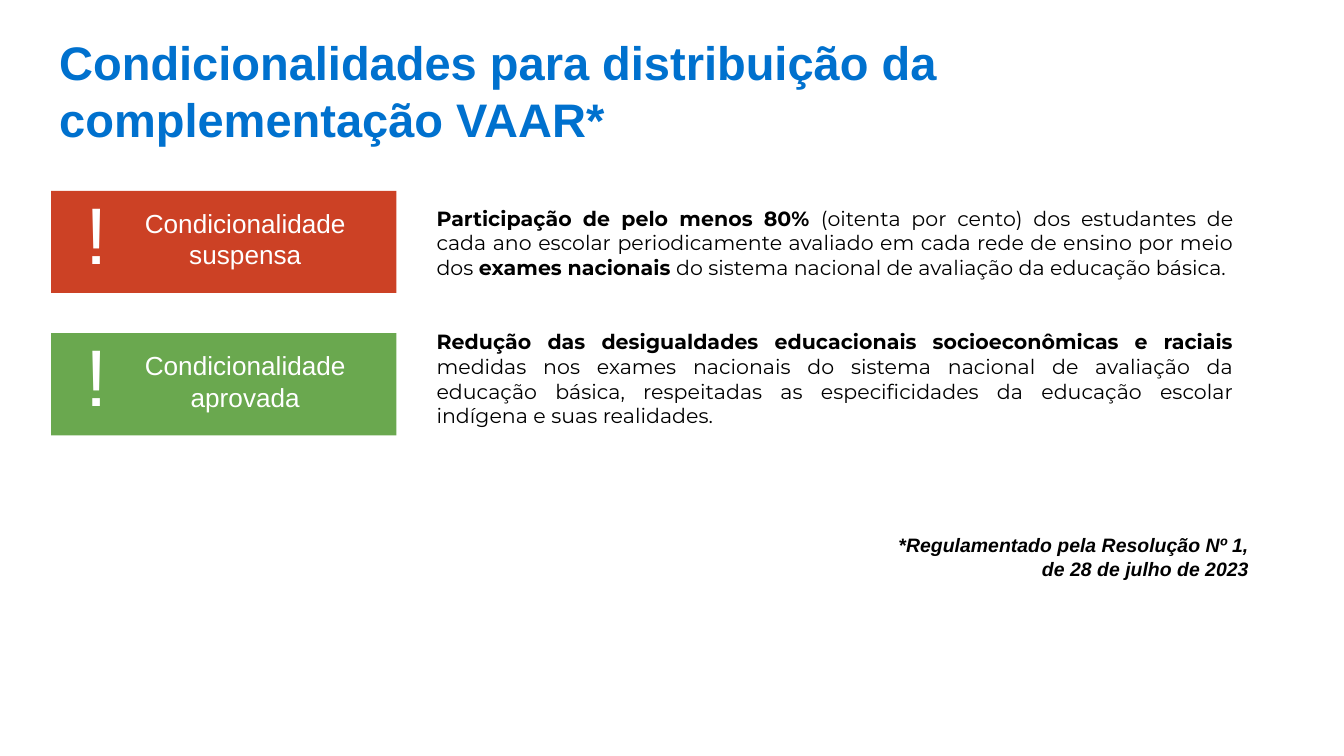
from pptx import Presentation
from pptx.dml.color import RGBColor
from pptx.enum.shapes import MSO_SHAPE
from pptx.enum.text import MSO_ANCHOR, PP_ALIGN
from pptx.util import Inches, Pt

RECT = MSO_SHAPE.RECTANGLE
TOP, MIDDLE = MSO_ANCHOR.TOP, MSO_ANCHOR.MIDDLE
LEFT, CENTER, RIGHT, JUSTIFY = (
    PP_ALIGN.LEFT, PP_ALIGN.CENTER, PP_ALIGN.RIGHT, PP_ALIGN.JUSTIFY)

COLORS = {"title": "0071CE", "suspended": "CC4125", "approved": "6AA84F",
          "light": "FFFFFF", "text": "000000"}

SLIDE_W = 10
SLIDE_H = SLIDE_W * 9 / 16
INSET = 0.1
ROW_TOP, ROW_STEP = 1.42, 1.06
BADGE_X, BADGE_W, BADGE_H = 0.38, 2.57, 0.76
MARK_X, LABEL_X, BODY_X = 0.54, 0.62, 3.15

# Badge colour, label, top and height of the text, (text, bold) runs
CONDITIONS = [
    ("suspended", "Condicionalidade suspensa", 1.43, 0.76, [
        ("Participação de pelo menos 80%", True),
        (" (oitenta por cento) dos estudantes de cada ano escolar "
         "periodicamente avaliado em cada rede de ensino por meio dos ", False),
        ("exames nacionais", True),
        (" do sistema nacional de avaliação da educação básica.", False)]),
    ("approved", "Condicionalidade aprovada", 2.35, 0.94, [
        ("Redução das desigualdades educacionais socioeconômicas e raciais ",
         True),
        ("medidas nos exames nacionais do sistema nacional de avaliação da "
         "educação básica, respeitadas as especificidades da educação escolar "
         "indígena e suas realidades.", False)]),
]


def rgb(name):
    return RGBColor.from_string(COLORS[name])


def box(x, y, w, h):
    return [Inches(v) for v in (x, y, w, h)]


def write(sp, runs, size, color, font="Arial", align=LEFT, anchor=TOP,
          italic=False):
    """Fill a shape with one paragraph of (text, bold) runs."""
    tf = sp.text_frame
    tf.word_wrap = True
    tf.vertical_anchor = anchor
    tf.margin_left = tf.margin_right = Inches(INSET)
    tf.margin_top = tf.margin_bottom = Inches(INSET)
    p = tf.paragraphs[0]
    p.alignment = align
    p.font.name, p.font.size, p.font.italic = font, Pt(size), italic
    p.font.color.rgb = rgb(color)
    for text, bold in runs:
        r = p.add_run()
        r.text = text
        r.font.bold = bold


def add_title(s, text):
    title = s.shapes.title
    title.left, title.top, title.width, title.height = box(
        0.34, 0.15, 9.32, 0.63)
    write(title, [(text, True)], 25.2, "title")


def add_text(s, place, runs, size, color, **style):
    write(s.shapes.add_textbox(*box(*place)), runs, size, color, **style)


def add_badge(s, y, color, label):
    sp = s.shapes.add_shape(RECT, *box(BADGE_X, y, BADGE_W, BADGE_H))
    sp.shadow.inherit = False
    sp.fill.solid()
    sp.fill.fore_color.rgb = rgb(color)
    sp.line.fill.background()
    add_text(s, (LABEL_X, y, 2.41, 0.71), [(label, False)], 14, "light",
             align=CENTER, anchor=MIDDLE)
    add_text(s, (MARK_X, y - 0.15, 0.64, 0.93), [("!", False)], 43, "light")


def main():
    prs = Presentation()
    prs.slide_width, prs.slide_height = Inches(SLIDE_W), Inches(SLIDE_H)
    s = prs.slides.add_slide(prs.slide_layouts[5])
    add_title(s, "Condicionalidades para distribuição da complementação VAAR*")
    for i, (color, label, top, height, runs) in enumerate(CONDITIONS):
        add_badge(s, ROW_TOP + i * ROW_STEP, color, label)
        add_text(s, (BODY_X, top, 6.13, height), runs, 11, "text",
                 font="Montserrat", align=JUSTIFY)
    add_text(s, (6.54, 3.87, 2.85, 0.55),
             [("*Regulamentado pela Resolução Nº 1, de 28 de julho de 2023",
               True)],
             10.4, "text", align=RIGHT, italic=True)
    prs.save("out.pptx")


if __name__ == "__main__":
    main()
